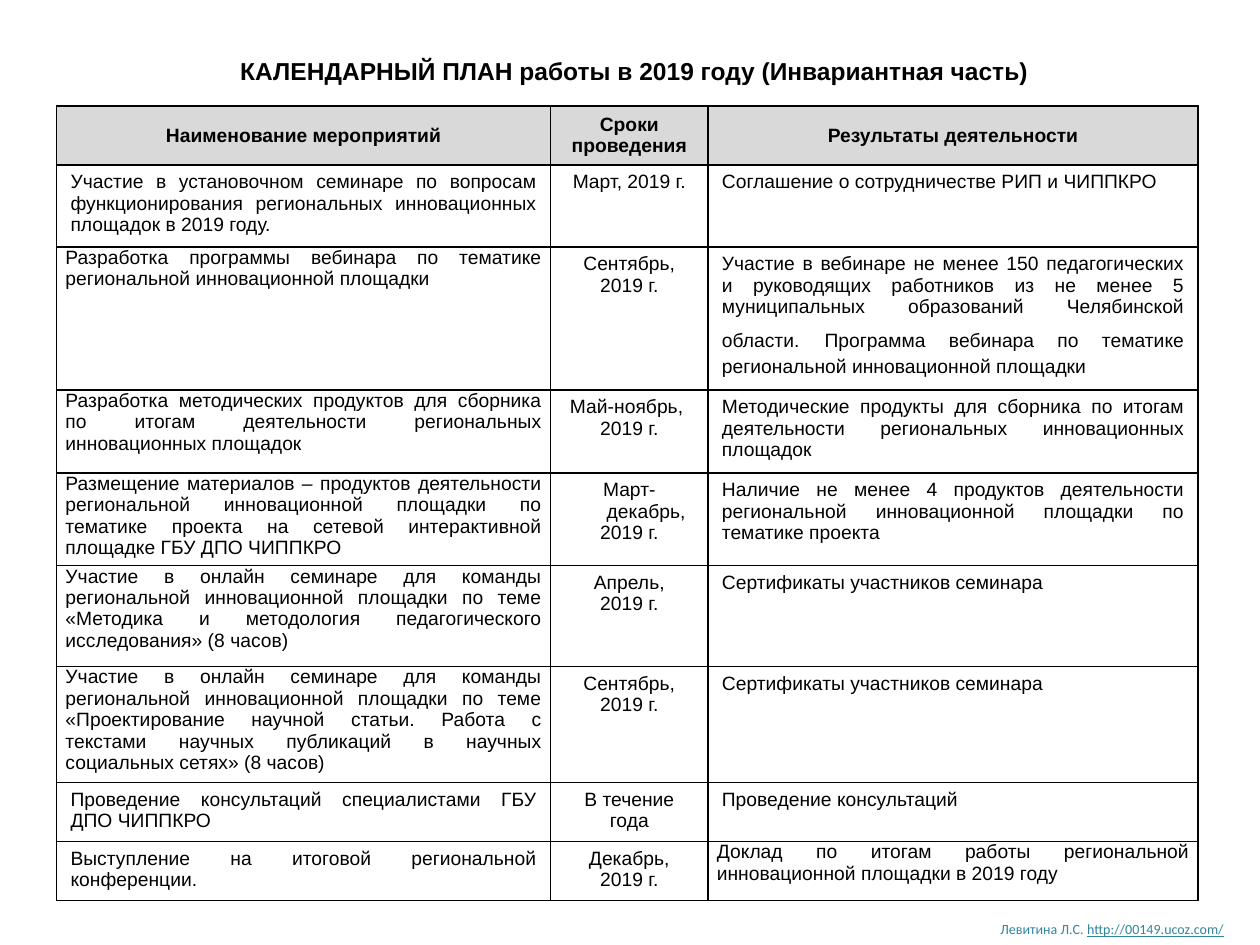
from dataclasses import dataclass

from pptx import Presentation
from pptx.dml.color import RGBColor
from pptx.enum.text import MSO_ANCHOR, MSO_AUTO_SIZE, PP_ALIGN
from pptx.oxml import parse_xml
from pptx.oxml.ns import nsdecls
from pptx.util import Inches, Pt

COLORS = {"text": "000000", "header": "D9D9D9", "body": "FFFFFF",
          "border": "000000", "author": "31859C", "link": "31859B"}
COLUMN_WIDTHS = (3.92, 1.25, 3.89)
ROOMY, TIGHT = (0.11, 0.05), (0.07, 0)  # horizontal and vertical cell margins


@dataclass
class Activity:
    name: str
    dates: str
    result: str
    height: float
    tight_name: bool = True
    tight_result: bool = False
    hanging_dates: bool = True


HEADINGS = ("Наименование мероприятий", "Сроки\nпроведения", "Результаты деятельности")
HEADING_HEIGHT = 0.47
WEBINAR_AUDIENCE = ("Участие в вебинаре не менее 150 педагогических и руководящих работников "
                    "из не менее 5 муниципальных образований Челябинской области.")
WEBINAR_PROGRAM = "Программа вебинара по тематике региональной инновационной площадки"

ACTIVITIES = [
    Activity("Участие в установочном семинаре по вопросам функционирования региональных "
             "инновационных площадок в 2019 году.",
             "Март, 2019 г.", "Соглашение о сотрудничестве РИП и ЧИППКРО",
             0.65, tight_name=False),
    Activity("Разработка программы вебинара по тематике региональной инновационной площадки",
             "Сентябрь,\n2019 г.", WEBINAR_AUDIENCE, 1.13),
    Activity("Разработка методических продуктов для сборника по итогам деятельности "
             "региональных инновационных площадок",
             "Май-ноябрь, \n2019 г.",
             "Методические продукты для сборника по итогам деятельности региональных "
             "инновационных площадок", 0.66),
    Activity("Размещение материалов – продуктов деятельности региональной инновационной "
             "площадки по тематике проекта на сетевой интерактивной площадке ГБУ ДПО ЧИППКРО",
             "Март-декабрь, \n2019 г.",
             "Наличие не менее 4 продуктов деятельности региональной инновационной "
             "площадки по тематике проекта", 0.73),
    Activity("Участие в онлайн семинаре для команды региональной инновационной площадки "
             "по теме «Методика и методология педагогического исследования» (8 часов)",
             "Апрель,\n2019 г.", "Сертификаты участников семинара", 0.8),
    Activity("Участие в онлайн семинаре для команды региональной инновационной площадки "
             "по теме «Проектирование научной статьи. Работа с текстами научных публикаций "
             "в научных социальных сетях» (8 часов)",
             "Сентябрь,\n2019 г.", "Сертификаты участников семинара",
             0.92, hanging_dates=False),
    Activity("Проведение консультаций специалистами ГБУ ДПО ЧИППКРО",
             "В течение года", "Проведение консультаций",
             0.47, tight_name=False, hanging_dates=False),
    Activity("Выступление на итоговой региональной конференции.",
             "Декабрь,\n2019 г.",
             "Доклад по итогам работы региональной инновационной площадки в 2019 году",
             0.47, tight_name=False, tight_result=True, hanging_dates=False),
]


def format_run(run, size: float, color: str, font: str = "Arial",
               bold: bool = False, underline: bool = False) -> None:
    run.font.size = Pt(size)
    run.font.name = font
    run.font.bold = bold
    run.font.underline = underline
    run.font.color.rgb = RGBColor.from_string(COLORS[color])


def add_borders(cell) -> None:
    properties = cell._tc.get_or_add_tcPr()
    for index, side in enumerate(("lnL", "lnR", "lnT", "lnB")):
        properties.insert(index, parse_xml(
            f'<a:{side} {nsdecls("a")} w="12700"><a:solidFill>'
            f'<a:srgbClr val="{COLORS["border"]}"/></a:solidFill></a:{side}>'))


def fill_cell(cell, text: str, alignment: PP_ALIGN, margins: tuple = ROOMY,
              heading: bool = False, hanging: bool = False) -> None:
    cell.text_frame.text = text
    cell.margin_left = cell.margin_right = Inches(margins[0])
    cell.margin_top = cell.margin_bottom = Inches(margins[1])
    cell.vertical_anchor = MSO_ANCHOR.MIDDLE if heading else MSO_ANCHOR.TOP
    cell.fill.solid()
    cell.fill.fore_color.rgb = RGBColor.from_string(COLORS["header" if heading else "body"])
    for paragraph in cell.text_frame.paragraphs:
        paragraph.alignment = alignment
        if hanging:
            indents = paragraph._p.get_or_add_pPr()
            indents.set("marL", str(Inches(0.31)))
            indents.set("indent", str(Inches(-0.31)))
        for run in paragraph.runs:
            format_run(run, 11, "text", bold=heading)
    add_borders(cell)


def add_plan_table(slide) -> None:
    heights = [HEADING_HEIGHT] + [activity.height for activity in ACTIVITIES]
    plan = slide.shapes.add_table(len(heights), len(COLUMN_WIDTHS), Inches(0.45), Inches(0.84),
                                  Inches(sum(COLUMN_WIDTHS)), Inches(sum(heights))).table
    plan.first_row = plan.horz_banding = False
    for column, width in zip(plan.columns, COLUMN_WIDTHS):
        column.width = Inches(width)
    for row, height in zip(plan.rows, heights):
        row.height = Inches(height)

    for column, heading in enumerate(HEADINGS):
        fill_cell(plan.cell(0, column), heading, PP_ALIGN.CENTER, heading=True)
    for row, activity in enumerate(ACTIVITIES, start=1):
        fill_cell(plan.cell(row, 0), activity.name, PP_ALIGN.JUSTIFY,
                  TIGHT if activity.tight_name else ROOMY)
        fill_cell(plan.cell(row, 1), activity.dates, PP_ALIGN.CENTER,
                  hanging=activity.hanging_dates)
        fill_cell(plan.cell(row, 2), activity.result, PP_ALIGN.JUSTIFY,
                  TIGHT if activity.tight_result else ROOMY)

    # The webinar result continues after a larger space
    webinar_result = plan.cell(2, 2).text_frame.paragraphs[0]
    for text, size, font in ((" ", 18, "Calibri"), (WEBINAR_PROGRAM, 11, "Arial")):
        run = webinar_result.add_run()
        run.text = text
        format_run(run, size, "text", font)


def add_title(slide) -> None:
    title = slide.shapes.title
    title.left, title.top = Inches(0.39), Inches(0.39)
    title.width, title.height = Inches(9.29), Inches(0.34)
    title.text_frame.text = "КАЛЕНДАРНЫЙ ПЛАН работы в 2019 году (Инвариантная часть)"
    title.text_frame.auto_size = MSO_AUTO_SIZE.NONE
    title.text_frame.vertical_anchor = MSO_ANCHOR.MIDDLE
    heading = title.text_frame.paragraphs[0]
    heading.alignment = PP_ALIGN.CENTER
    format_run(heading.runs[0], 14, "text", bold=True)


def add_author(slide) -> None:
    author = slide.shapes.add_textbox(Inches(7.84), Inches(7.26), Inches(2.02), Inches(0.24))
    author.text_frame.word_wrap = False
    signature = author.text_frame.paragraphs[0]
    for text, color, underline in (("Левитина Л.С. ", "author", False),
                                   ("http://00149.ucoz.com/", "link", True)):
        run = signature.add_run()
        run.text = text
        format_run(run, 8, color, "Calibri", underline=underline)


def main() -> None:
    presentation = Presentation()
    presentation.slide_width, presentation.slide_height = Inches(10), Inches(7.5)
    slide = presentation.slides.add_slide(presentation.slide_layouts[5])
    add_author(slide)
    add_title(slide)
    add_plan_table(slide)
    presentation.save("out.pptx")


if __name__ == "__main__":
    main()
